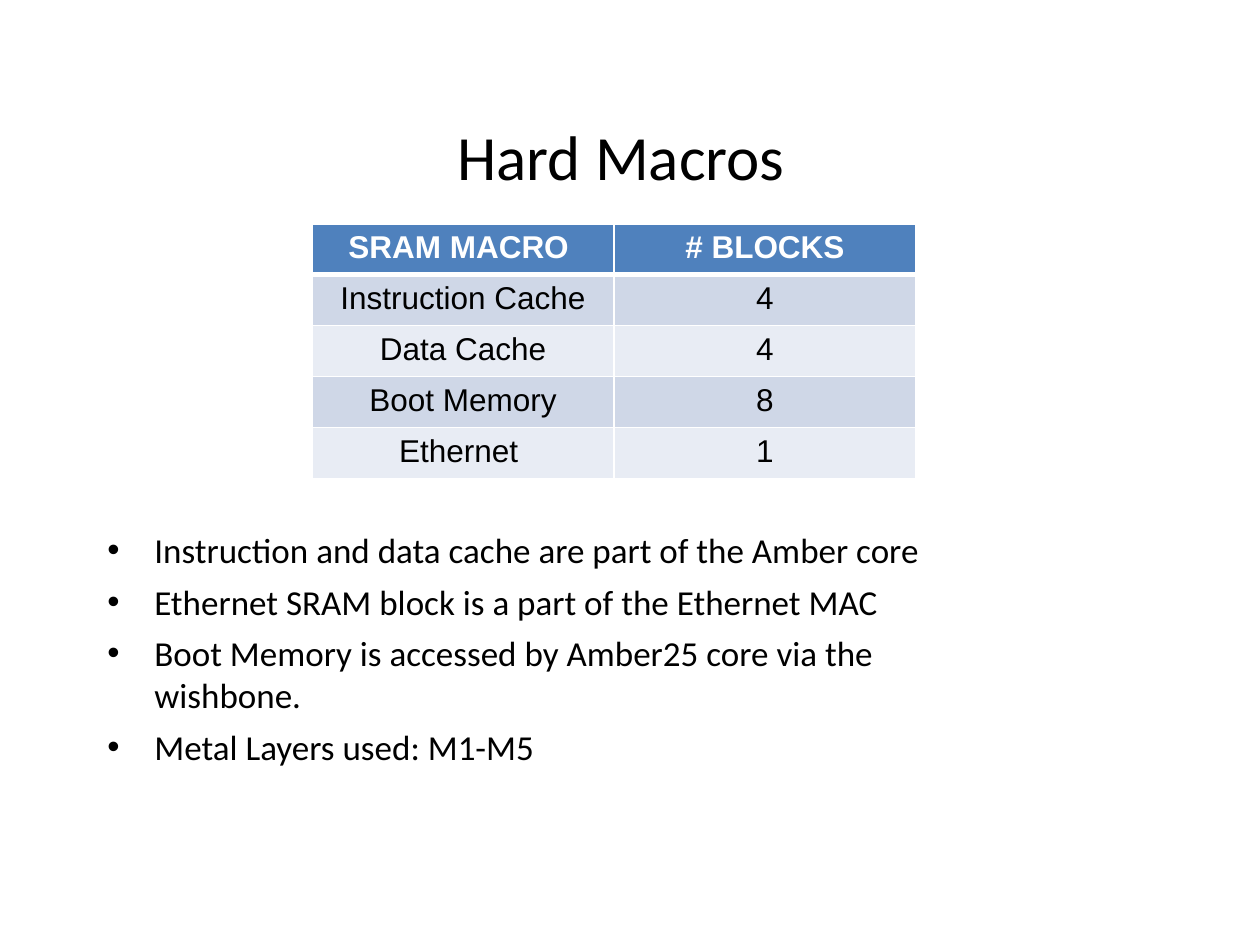
import dataclasses

import lxml.etree
import pptx
import pptx.dml.color
import pptx.enum.text
import pptx.oxml
import pptx.oxml.ns
import pptx.util

EMU_PER_PX = 914400 / 126
BLACK = pptx.dml.color.RGBColor(0x00, 0x00, 0x00)
WHITE = pptx.dml.color.RGBColor(0xFF, 0xFF, 0xFF)
HEADER_BLUE = pptx.dml.color.RGBColor(0x4F, 0x81, 0xBD)
BAND_DARK = pptx.dml.color.RGBColor(0xCF, 0xD7, 0xE7)
BAND_LIGHT = pptx.dml.color.RGBColor(0xE8, 0xEC, 0xF4)
CENTER = pptx.enum.text.PP_ALIGN.CENTER
MIDDLE = pptx.enum.text.MSO_ANCHOR.MIDDLE
BULLET_INDENT = 47
HEADER_HEIGHT = 30
ROW_HEIGHT = 51
COLUMN_WIDTH = 302


@dataclasses.dataclass(frozen=True)
class Area:
    left: int
    top: int
    width: int
    height: int


@dataclasses.dataclass(frozen=True)
class MacroRow:
    macro: str
    blocks: str


TITLE_AREA = Area(54, 76, 1134, 158)
TABLE_AREA = Area(312, 224, 2 * COLUMN_WIDTH, 254)
NOTES_AREA = Area(95, 522, 843, 309)

TITLE_FORMAT = {"size": pptx.util.Pt(36), "name": "Calibri", "color": BLACK}
NOTES_FORMAT = {"size": pptx.util.Pt(20), "name": "Calibri", "color": BLACK}
HEADER_FORMAT = {"size": pptx.util.Pt(18), "name": "Arial", "color": WHITE, "bold": True}
CELL_FORMAT = {"size": pptx.util.Pt(18), "name": "Arial", "color": BLACK, "bold": False}

ROWS = [
    MacroRow("SRAM MACRO ", "# BLOCKS"),
    MacroRow("Instruction Cache", "4"),
    MacroRow("Data Cache", "4"),
    MacroRow("Boot Memory", "8"),
    MacroRow("Ethernet ", "1"),
]
NOTES = [
    "Instruction and data cache are part of the Amber core",
    "Ethernet SRAM block is a part of the Ethernet MAC",
    "Boot Memory is accessed by Amber25 core via the wishbone.",
    "Metal Layers used: M1-M5",
]


def px(length: int) -> int:
    return round(length * EMU_PER_PX)


def place(area: Area) -> list[int]:
    return [px(length) for length in dataclasses.astuple(area)]


def write(para, text: str, text_format: dict) -> None:
    span = para.add_run()
    span.text = text
    for attribute, value in text_format.items():
        if attribute == "color":
            span.font.color.rgb = value
        else:
            setattr(span.font, attribute, value)


def add_text_box(page, area: Area):
    frame = page.shapes.add_textbox(*place(area)).text_frame
    frame.word_wrap = True
    return frame


def add_bullet(para) -> None:
    properties = para._p.get_or_add_pPr()
    properties.set("marL", str(px(BULLET_INDENT)))
    properties.set("indent", str(-px(BULLET_INDENT)))
    for tag, attributes in (("a:buFont", {"typeface": "Arial"}), ("a:buChar", {"char": "•"})):
        lxml.etree.SubElement(properties, pptx.oxml.ns.qn(tag), attributes)


def add_border(cell, side: str, points: int) -> None:
    cell._tc.get_or_add_tcPr().append(pptx.oxml.parse_xml(
        f'<a:ln{side} {pptx.oxml.ns.nsdecls("a")} w="{pptx.util.Pt(points)}">'
        f'<a:solidFill><a:srgbClr val="{WHITE}"/></a:solidFill></a:ln{side}>'
    ))


def add_title(page) -> None:
    frame = add_text_box(page, TITLE_AREA)
    frame.vertical_anchor = MIDDLE
    frame.paragraphs[0].alignment = CENTER
    write(frame.paragraphs[0], "Hard Macros", TITLE_FORMAT)


def add_notes(page) -> None:
    frame = add_text_box(page, NOTES_AREA)
    for index, note in enumerate(NOTES):
        para = frame.add_paragraph() if index else frame.paragraphs[0]
        add_bullet(para)
        if index:
            para.space_before = pptx.util.Pt(5.6)
        write(para, note, NOTES_FORMAT)


def fill_cell(cell, text: str, row_index: int) -> None:
    is_header = row_index == 0
    borders = {"L": 1, "R": 1, "T": 1, "B": 3} if is_header else {"L": 1, "R": 1, "B": 1}
    for side, points in borders.items():
        add_border(cell, side, points)
    cell.fill.solid()
    band = BAND_DARK if row_index % 2 else BAND_LIGHT
    cell.fill.fore_color.rgb = HEADER_BLUE if is_header else band
    para = cell.text_frame.paragraphs[0]
    para.alignment = CENTER
    write(para, text, HEADER_FORMAT if is_header else CELL_FORMAT)


def add_macro_table(page) -> None:
    frame = page.shapes.add_table(len(ROWS), 2, *place(TABLE_AREA))
    table = frame.table
    for column in table.columns:
        column.width = px(COLUMN_WIDTH)
    for row_index, row in enumerate(ROWS):
        table.rows[row_index].height = px(ROW_HEIGHT if row_index else HEADER_HEIGHT)
        for column_index, text in enumerate(dataclasses.astuple(row)):
            fill_cell(table.cell(row_index, column_index), text, row_index)
    frame.height = px(TABLE_AREA.height)


def main() -> None:
    deck = pptx.Presentation()
    deck.slide_width = px(1260)
    deck.slide_height = px(945)
    page = deck.slides.add_slide(deck.slide_layouts[6])
    add_title(page)
    add_notes(page)
    add_macro_table(page)
    deck.save("out.pptx")


if __name__ == "__main__":
    main()
